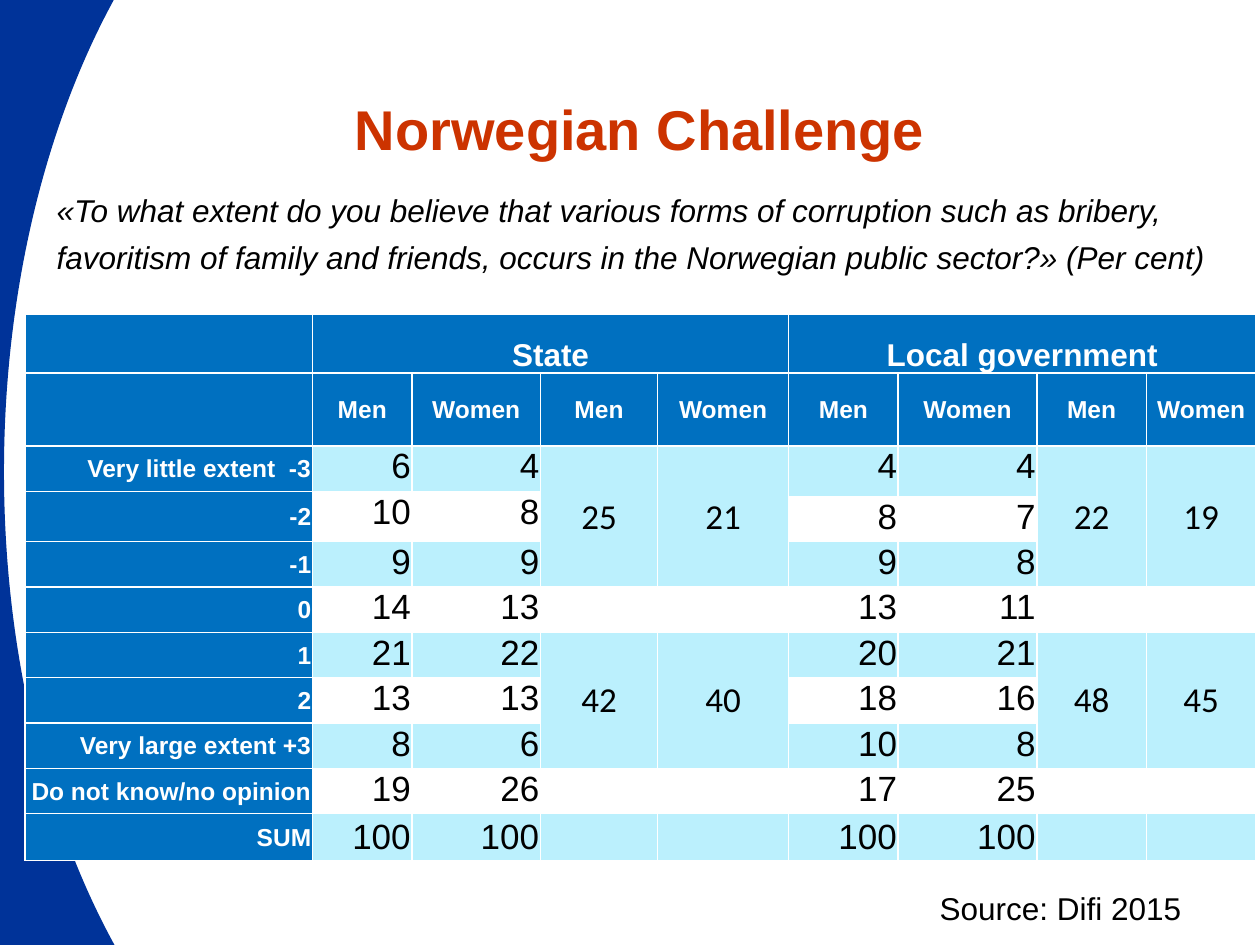
import pptx
import pptx.dml.color
import pptx.enum.shapes
import pptx.enum.text
import pptx.oxml
import pptx.oxml.ns
import pptx.util

Inches = pptx.util.Inches
Pt = pptx.util.Pt
RGBColor = pptx.dml.color.RGBColor
Align = pptx.enum.text.PP_ALIGN
Anchor = pptx.enum.text.MSO_ANCHOR
AutoSize = pptx.enum.text.MSO_AUTO_SIZE

NAVY = RGBColor(0x00, 0x33, 0x99)
RED = RGBColor(0xCC, 0x33, 0x00)
BLUE = RGBColor(0x00, 0x70, 0xC0)
CYAN = RGBColor(0xBB, 0xF0, 0xFD)
WHITE = RGBColor(0xFF, 0xFF, 0xFF)
BLACK = RGBColor(0x00, 0x00, 0x00)

COLUMN_WIDTHS = [2.28, 0.79, 1.02, 0.93, 1.04, 0.87, 1.1, 0.87, 0.87]
ROW_HEIGHTS = [0.47, 0.58, 0.36, 0.04] + [0.36] * 7 + [0.37]
STATE_COLUMN, LOCAL_COLUMN = 1, 5
GROUPS = [("State", STATE_COLUMN), ("Local government", LOCAL_COLUMN)]
ANSWERS = [
    ("Very little extent  -3", (6, 4), (4, 4)),
    ("-2", (10, 8), (8, 7)),
    ("-1", (9, 9), (9, 8)),
    ("0", (14, 13), (13, 11)),
    ("1", (21, 22), (20, 21)),
    ("2", (13, 13), (18, 16)),
    ("Very large extent +3", (8, 6), (10, 8)),
    ("Do not know/no opinion", (19, 26), (17, 25)),
    ("SUM", (100, 100), (100, 100)),
]
STATE_ROWS = [2, 3, 5, 6, 7, 8, 9, 10, 11]
LOCAL_ROWS = [2, 4, 5, 6, 7, 8, 9, 10, 11]
TOTALS = [(2, 5, (25, 21), (22, 19)), (7, 9, (42, 40), (48, 45))]


class SlideBuilder:
    font = "Arial"

    def __init__(self, presentation):
        self.slide = presentation.slides.add_slide(presentation.slide_layouts[1])

    def place(self, shape, left, top, width, height):
        shape.left, shape.top = Inches(left), Inches(top)
        shape.width, shape.height = Inches(width), Inches(height)

    def add_run(self, paragraph, text, size, color, bold=False, italic=False, font=None):
        run = paragraph.add_run()
        run.text = text
        run.font.name = font or self.font
        run.font.size = Pt(size)
        run.font.bold = bold
        run.font.italic = italic
        run.font.color.rgb = color

    def moon(self, left, top, width, height):
        shape = self.slide.shapes.add_shape(
            pptx.enum.shapes.MSO_SHAPE.MOON,
            Inches(left), Inches(top), Inches(width), Inches(height))
        shape.adjustments[0] = 0.51
        shape.shadow.inherit = False
        shape.fill.solid()
        shape.fill.fore_color.rgb = NAVY
        shape.line.fill.background()
        shape.element.getparent().insert(2, shape.element)

    def title(self, text, *box):
        shape = self.slide.shapes.title
        self.place(shape, *box)
        shape.text_frame.auto_size = AutoSize.NONE
        shape.text_frame.vertical_anchor = Anchor.MIDDLE
        paragraph = shape.text_frame.paragraphs[0]
        paragraph.alignment = Align.CENTER
        paragraph.line_spacing = Pt(42)
        self.add_run(paragraph, text, 32, RED, bold=True)

    def question(self, text, *box):
        shape = self.slide.placeholders[1]
        self.place(shape, *box)
        shape.text_frame.auto_size = AutoSize.NONE
        paragraph = shape.text_frame.paragraphs[0]
        properties = paragraph._p.get_or_add_pPr()
        properties.set("marL", "0")
        properties.set("indent", "0")
        properties.append(pptx.oxml.parse_xml(
            f"<a:buNone {pptx.oxml.ns.nsdecls('a')}/>"))
        paragraph.line_spacing = Pt(27)
        paragraph.space_before = Pt(0)
        paragraph.space_after = Pt(13)
        self.add_run(paragraph, text, 18, BLACK, italic=True)

    def note(self, text, left, top, width, height):
        box = self.slide.shapes.add_textbox(
            Inches(left), Inches(top), Inches(width), Inches(height))
        box.text_frame.word_wrap = False
        box.text_frame.auto_size = AutoSize.SHAPE_TO_FIT_TEXT
        self.add_run(box.text_frame.paragraphs[0], text, 18, BLACK)

    def table(self, left, top):
        frame = self.slide.shapes.add_table(
            len(ROW_HEIGHTS), len(COLUMN_WIDTHS), Inches(left), Inches(top),
            Inches(sum(COLUMN_WIDTHS)), Inches(sum(ROW_HEIGHTS)))
        table = frame.table
        table.first_row = table.horz_banding = False
        for column, width in zip(table.columns, COLUMN_WIDTHS):
            column.width = Inches(width)
        for row, height in zip(table.rows, ROW_HEIGHTS):
            row.height = Inches(height)
        for cell in table.iter_cells():
            self.style_cell(cell)
        return table

    def style_cell(self, cell):
        cell.margin_left = cell.margin_right = cell.margin_top = Inches(0.01)
        cell.margin_bottom = 0
        properties = cell._tc.get_or_add_tcPr()
        for side in ("lnL", "lnR", "lnT", "lnB"):
            properties.append(pptx.oxml.parse_xml(
                f"<a:{side} {pptx.oxml.ns.nsdecls('a')} w='12700'><a:solidFill>"
                f"<a:srgbClr val='{WHITE}'/></a:solidFill></a:{side}>"))
        cell.fill.background()

    def fill_cell(self, cell, color):
        cell.fill.solid()
        cell.fill.fore_color.rgb = color

    def write_cell(self, cell, text, alignment, anchor, size, color, bold=False, font=None):
        cell.vertical_anchor = anchor
        paragraph = cell.text_frame.paragraphs[0]
        paragraph.alignment = alignment
        self.add_run(paragraph, text, size, color, bold=bold, font=font)


def fill_headings(builder, table):
    for row in range(len(ROW_HEIGHTS)):
        builder.fill_cell(table.cell(row, 0), BLUE)
    for column in range(1, len(COLUMN_WIDTHS)):
        for row in (0, 1):
            builder.fill_cell(table.cell(row, column), BLUE)
        builder.write_cell(table.cell(1, column), "Men" if column % 2 else "Women",
                           Align.CENTER, Anchor.MIDDLE, 14, WHITE, bold=True)
    for name, column in GROUPS:
        table.cell(0, column).merge(table.cell(0, column + 3))
        builder.write_cell(table.cell(0, column), name,
                           Align.CENTER, Anchor.BOTTOM, 18, WHITE, bold=True)


def fill_answers(builder, table):
    for column in (0, 1, 2):
        table.cell(3, column).merge(table.cell(4, column))
    for column in (5, 6):
        table.cell(2, column).merge(table.cell(3, column))
    last = len(ANSWERS) - 1
    for index, (label, state, local) in enumerate(ANSWERS):
        builder.write_cell(table.cell(STATE_ROWS[index], 0), label,
                           Align.RIGHT, Anchor.MIDDLE, 14, WHITE, bold=True)
        anchor = Anchor.MIDDLE if index == last else Anchor.TOP
        for first, rows, values in ((STATE_COLUMN, STATE_ROWS, state),
                                    (LOCAL_COLUMN, LOCAL_ROWS, local)):
            for offset, value in enumerate(values):
                cell = table.cell(rows[index], first + offset)
                if index % 2 == 0:
                    builder.fill_cell(cell, CYAN)
                builder.write_cell(cell, str(value), Align.RIGHT, anchor, 20, BLACK)


def fill_totals(builder, table):
    for top, bottom, state, local in TOTALS:
        for column, value in zip((3, 4, 7, 8), state + local):
            cell = table.cell(top, column)
            cell.merge(table.cell(bottom, column))
            builder.fill_cell(cell, CYAN)
            builder.write_cell(cell, str(value), Align.CENTER, Anchor.MIDDLE,
                               20, BLACK, font="Calibri")
    for column in (3, 4, 7, 8):
        builder.fill_cell(table.cell(STATE_ROWS[-1], column), CYAN)


def main():
    presentation = pptx.Presentation()
    presentation.slide_width = Inches(10)
    presentation.slide_height = Inches(7.5)
    builder = SlideBuilder(presentation)
    builder.moon(-1.33, -0.67, 2.67, 8.83)
    builder.title("Norwegian Challenge", 0.83, 0.58, 8.5, 0.83)
    builder.question(
        "«To what extent do you believe that various forms of corruption such as bribery, "
        "favoritism of family and friends, occurs in the Norwegian public sector?» (Per cent)",
        0.35, 1.39, 9.65, 0.87)
    table = builder.table(0.2, 2.49)
    fill_headings(builder, table)
    fill_answers(builder, table)
    fill_totals(builder, table)
    builder.note("Source: Difi 2015", 7.36, 7.01, 2.14, 0.4)
    presentation.save("out.pptx")


if __name__ == "__main__":
    main()
